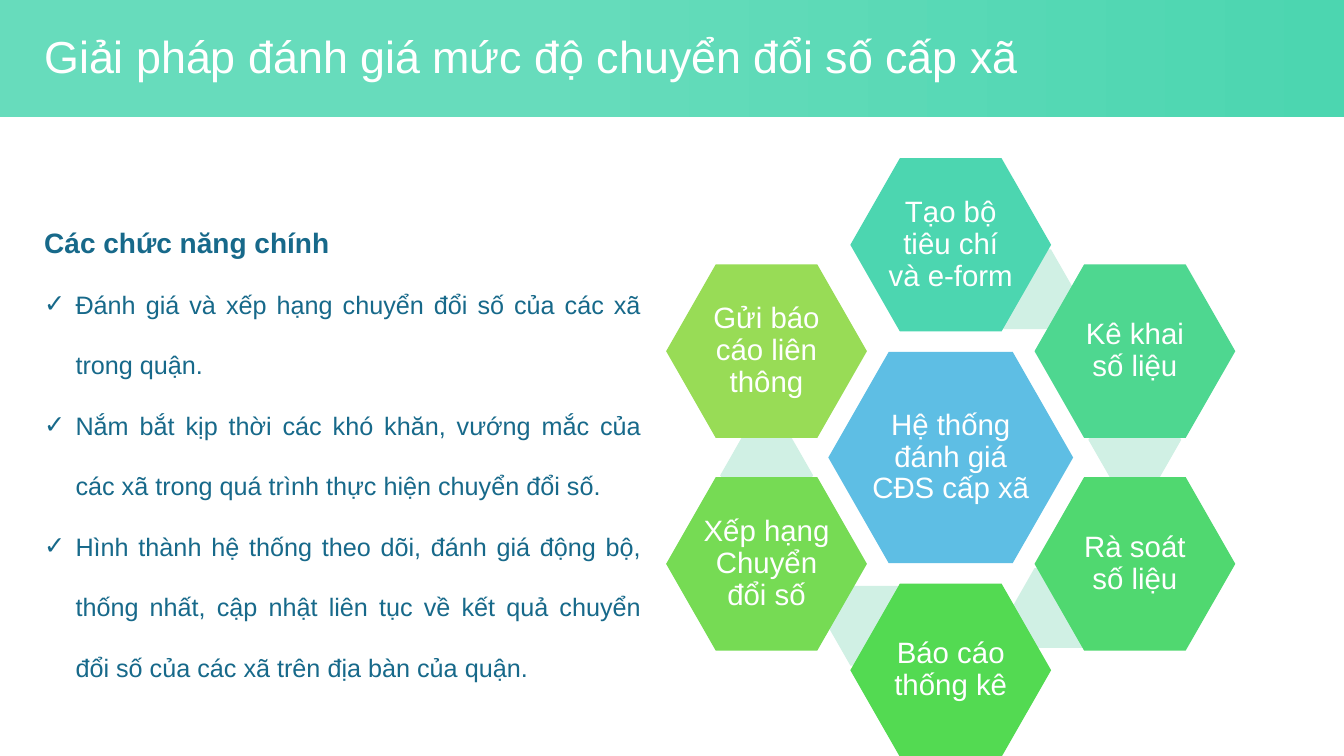
from math import cos, radians, sin

from lxml import etree
from pptx import Presentation
from pptx.dml.color import RGBColor
from pptx.enum.shapes import MSO_SHAPE
from pptx.enum.text import MSO_ANCHOR, MSO_AUTO_SIZE, PP_ALIGN
from pptx.oxml.ns import qn
from pptx.util import Cm, Pt

RECTANGLE, HEXAGON = MSO_SHAPE.RECTANGLE, MSO_SHAPE.HEXAGON
MIDDLE, TOP = MSO_ANCHOR.MIDDLE, MSO_ANCHOR.TOP
LEFT, CENTER, JUSTIFY = PP_ALIGN.LEFT, PP_ALIGN.CENTER, PP_ALIGN.JUSTIFY
FIXED_SIZE = MSO_AUTO_SIZE.NONE

WHITE = RGBColor(0xFF, 0xFF, 0xFF)
NAVY = RGBColor(0x17, 0x69, 0x8A)
BAND_START = RGBColor(0x67, 0xDC, 0xBC)
BAND_END = RGBColor(0x4C, 0xD6, 0xB0)
SKY = RGBColor(0x5E, 0xBE, 0xE4)
PALE_MINT = RGBColor(0xD0, 0xF0, 0xE4)

TITLE = "Giải pháp đánh giá mức độ chuyển đổi số cấp xã"
HEADING = "Các chức năng chính"
FUNCTIONS = [
    "Đánh giá và xếp hạng chuyển đổi số của các xã trong quận.",
    "Nắm bắt kịp thời các khó khăn, vướng mắc của các xã trong quá trình "
    "thực hiện chuyển đổi số.",
    "Hình thành hệ thống theo dõi, đánh giá động bộ, thống nhất, cập nhật "
    "liên tục về kết quả chuyển đổi số của các xã trên địa bàn của quận.",
]
SYSTEM = "Hệ thống đánh giá CĐS cấp xã"
STEPS = [
    ("Tạo bộ tiêu chí và e-form", RGBColor(0x4C, 0xD6, 0xB0)),
    ("Kê khai số liệu", RGBColor(0x4E, 0xD7, 0x90)),
    ("Rà soát số liệu", RGBColor(0x50, 0xD8, 0x70)),
    ("Báo cáo thống kê", RGBColor(0x53, 0xDA, 0x52)),
    ("Xếp hạng Chuyển đổi số", RGBColor(0x76, 0xDB, 0x54)),
    ("Gửi báo cáo liên thông", RGBColor(0x98, 0xDC, 0x56)),
]

RING_X, RING_Y = 23.96, 11.53
STEP_RADIUS, LINK_RADIUS = 5.36, 4.66
LINK_ANGLE = 24.5
SYSTEM_SIZE, STEP_SIZE, LINK_SIZE = (6.17, 5.33), (5.06, 4.37), (2.34, 2.01)


class SlideBuilder:
    font_name = "Arial"

    def __init__(self, presentation):
        self.slide = presentation.slides.add_slide(presentation.slide_layouts[1])
        self.width = presentation.slide_width

    def format(self, paragraph, size, color, align, spacing, bold=False):
        paragraph.alignment = align
        paragraph.line_spacing = spacing
        paragraph.space_before = Pt(0)
        for run in paragraph.runs:
            run.font.name = self.font_name
            run.font.size = Pt(size)
            run.font.bold = bold
            run.font.color.rgb = color

    def place(self, placeholder, left, top, width, height, anchor):
        placeholder.left, placeholder.top = Cm(left), Cm(top)
        placeholder.width, placeholder.height = Cm(width), Cm(height)
        frame = placeholder.text_frame
        frame.auto_size = FIXED_SIZE
        frame.word_wrap = True
        frame.vertical_anchor = anchor
        return frame

    def band(self, height):
        band = self.slide.shapes.add_shape(RECTANGLE, 0, 0, self.width, Cm(height))
        band.shadow.inherit = False
        band.line.fill.background()
        band.fill.gradient()
        band.fill.gradient_angle = 0
        stops = [(0.38, BAND_START), (1, BAND_END)]
        for stop, (position, color) in zip(band.fill.gradient_stops, stops):
            stop.position = position
            stop.color.rgb = color
        self.slide.shapes._spTree.insert(2, band._element)

    def title(self, text):
        frame = self.place(self.slide.shapes.title, 0.86, 0.48, 32.16, 2, MIDDLE)
        frame.text = text
        self.format(frame.paragraphs[0], 32, WHITE, LEFT, 0.9)

    def checklist(self, heading, items):
        frame = self.place(self.slide.placeholders[1], 0.86, 4.7, 15.55, 12.5, TOP)
        frame.text = "\n".join([heading, *items])
        head, *checks = frame.paragraphs
        self.bullet(head)
        self.format(head, 20, NAVY, JUSTIFY, 2, bold=True)
        for check in checks:
            self.bullet(check, "✓", 0.79)
            self.format(check, 18, NAVY, JUSTIFY, 2)

    def bullet(self, paragraph, mark=None, indent=0):
        properties = paragraph._p.get_or_add_pPr()
        properties.set("marL", str(Cm(indent)))
        properties.set("indent", str(-Cm(indent)))
        if mark:
            etree.SubElement(properties, qn("a:buFont"), typeface=self.font_name)
            etree.SubElement(properties, qn("a:buChar"), char=mark)
        else:
            etree.SubElement(properties, qn("a:buNone"))

    def hexagon(self, size, color, text="", radius=0, angle=0):
        width, height = size
        left = RING_X + radius * sin(radians(angle)) - width / 2
        top = RING_Y - radius * cos(radians(angle)) - height / 2
        cell = self.slide.shapes.add_shape(
            HEXAGON, Cm(left), Cm(top), Cm(width), Cm(height))
        cell.adjustments[0] = 0.286
        cell.shadow.inherit = False
        cell.fill.solid()
        cell.fill.fore_color.rgb = color
        cell.line.fill.background()
        if text:
            frame = cell.text_frame
            frame.margin_left = frame.margin_right = Cm(0.08)
            frame.margin_top = frame.margin_bottom = Cm(0.08)
            frame.word_wrap = True
            frame.vertical_anchor = MIDDLE
            frame.text = text
            self.format(frame.paragraphs[0], 21, WHITE, CENTER, 0.9)

    def step_ring(self, steps):
        sector = 360 / len(steps)
        for index, (label, color) in enumerate(steps):
            angle = index * sector
            if index < len(steps) - 1:
                self.hexagon(LINK_SIZE, PALE_MINT,
                             radius=LINK_RADIUS, angle=angle + LINK_ANGLE)
            self.hexagon(STEP_SIZE, color, label, STEP_RADIUS, angle)


def main():
    presentation = Presentation()
    presentation.slide_width, presentation.slide_height = Cm(33.87), Cm(19.05)
    builder = SlideBuilder(presentation)
    builder.band(2.95)
    builder.title(TITLE)
    builder.checklist(HEADING, FUNCTIONS)
    builder.hexagon(SYSTEM_SIZE, SKY, SYSTEM)
    builder.step_ring(STEPS)
    presentation.save("out.pptx")


if __name__ == "__main__":
    main()
